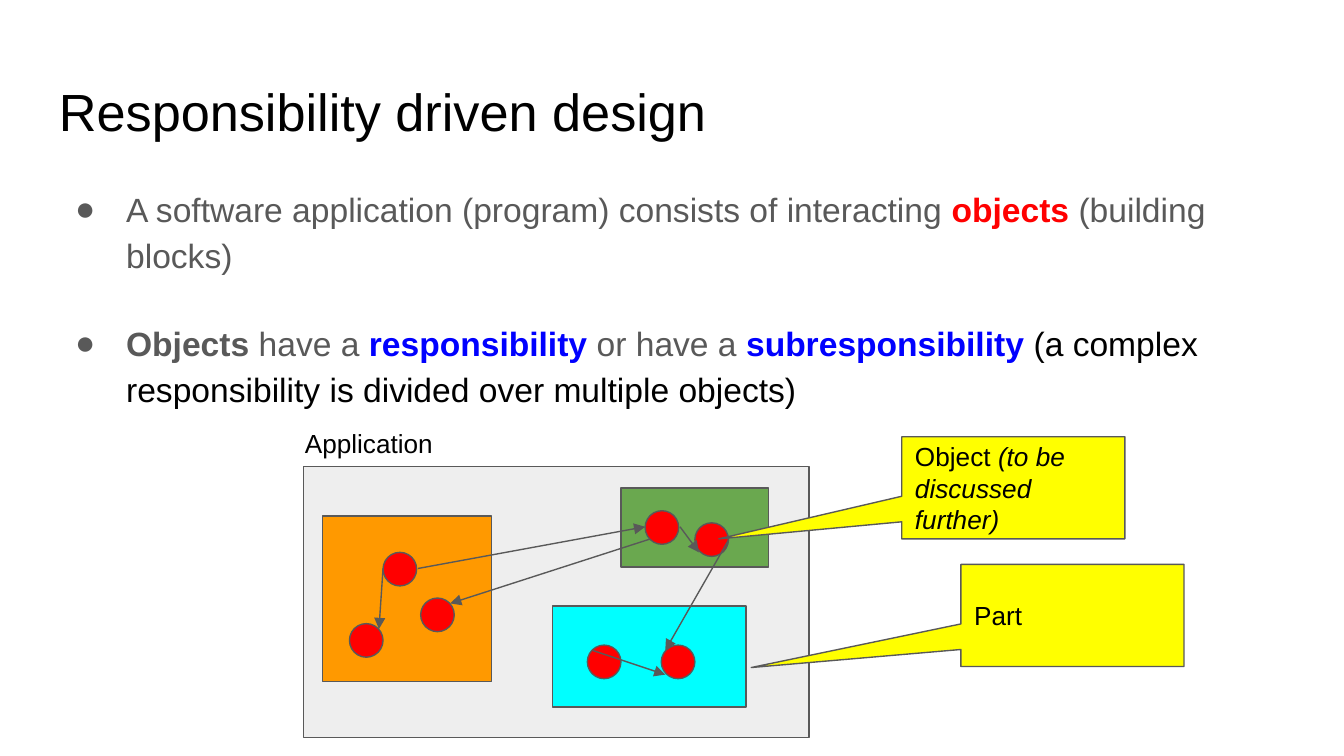
from dataclasses import dataclass

from lxml import etree
from pptx import Presentation
from pptx.dml.color import RGBColor
from pptx.enum.shapes import MSO_CONNECTOR, MSO_SHAPE
from pptx.enum.text import MSO_ANCHOR, PP_ALIGN
from pptx.oxml.ns import qn
from pptx.util import Inches, Pt

RECT = MSO_SHAPE.RECTANGLE
DOT = MSO_SHAPE.FLOWCHART_CONNECTOR
CALL = MSO_SHAPE.ROUNDED_RECTANGULAR_CALLOUT
LINE = MSO_CONNECTOR.STRAIGHT
TOP, MID = MSO_ANCHOR.TOP, MSO_ANCHOR.MIDDLE
LEFT = PP_ALIGN.LEFT

# The grid has 100 columns of square cells on a 16:9 slide
CELL = 0.1
COLS = 100
ROWS = COLS * 9 / 16
SIDE = 2.5  # dot size in cells
FONT = "Arial"
HUES = {
    "black": "000000", "gray": "595959", "pale": "EEEEEE", "red": "FF0000",
    "blue": "0000FF", "orange": "FF9900", "cyan": "00FFFF",
    "green": "6AA84F", "yellow": "FFFF00",
}


@dataclass
class Box:
    col: float
    row: float
    wide: float
    high: float
    hue: str = ""


@dataclass
class Run:
    text: str
    hue: str = "black"
    bold: bool = False
    slant: bool = False


@dataclass
class Arrow:
    start: tuple[float, float]
    end: tuple[float, float]


@dataclass
class Note:
    box: Box
    tip: tuple[float, float]  # pointer, as shares of the box from its centre
    runs: list[Run]


TITLE = Box(3.4, 4.9, 93.2, 6.3)
BODY = Box(3.4, 12.6, 93.2, 37.4)
LABEL = Box(21.7, 30.8, 46.7, 4.9)

POINTS = [
    [Run("A software application (program) consists of interacting ", "gray"),
     Run("objects", "red", True),
     Run(" (building blocks)", "gray")],
    [Run("Objects", "gray", True),
     Run(" have a ", "gray"),
     Run("responsibility", "blue", True),
     Run(" or have a ", "gray"),
     Run("subresponsibility ", "blue", True),
     Run("(a complex responsibility is divided over multiple objects)")],
]
PARTS = [
    Box(22.6, 34.7, 37.6, 20.2, "pale"),
    Box(24, 38.4, 12.6, 12.3, "orange"),
    Box(41.1, 45.1, 14.4, 7.5, "cyan"),
    Box(46.2, 36.3, 11, 5.9, "green"),
]
DOTS = [(43.7, 48), (48, 38), (26, 46.4), (28.5, 41.1),
        (49.2, 48), (31.3, 44.5), (51.7, 38.9)]
UNDER = [Arrow((31.1, 42.3), (48, 39.2)), Arrow((48.4, 40.1), (33.5, 44.9))]
OVER = [
    Arrow((50.6, 39.2), (52, 41.1)),
    Arrow((54.2, 40.2), (49.5, 48.4)),
    Arrow((44.1, 48.4), (49.5, 50.2)),
    Arrow((28.5, 42.3), (28.2, 46.8)),
]
NOTES = [
    Note(Box(67.1, 32.5, 16.6, 7.6), (-1.32, 0.5),
         [Run("Object "), Run("(to be discussed further)", slant=True)]),
    Note(Box(71.5, 42, 16.6, 7.6), (-1.44, 0.51), [Run("Part")]),
]


def cells(*nums: float) -> list[int]:
    return [Inches(num * CELL) for num in nums]


def place(box: Box) -> list[int]:
    return cells(box.col, box.row, box.wide, box.high)


def tint(hue: str) -> RGBColor:
    return RGBColor.from_string(HUES[hue])


def frame(shape, anchor=TOP):
    text = shape.text_frame
    text.word_wrap = True
    text.vertical_anchor = anchor
    text.margin_left = text.margin_right = Inches(0.1)
    text.margin_top = text.margin_bottom = Inches(0.1)
    return text


def write(para, runs: list[Run], size: int) -> None:
    para.alignment = LEFT
    for item in runs:
        run = para.add_run()
        run.text = item.text
        font = run.font
        font.name, font.size = FONT, Pt(size)
        font.bold, font.italic = item.bold, item.slant
        font.color.rgb = tint(item.hue)


def label(slide, box: Box, runs: list[Run], size: int) -> None:
    text = frame(slide.shapes.add_textbox(*place(box)))
    write(text.paragraphs[0], runs, size)


def bullet(para) -> None:
    props = para._p.get_or_add_pPr()
    props.set("marL", str(Inches(0.5)))
    props.set("indent", str(Inches(-0.38)))
    color = etree.SubElement(props, qn("a:buClr"))
    etree.SubElement(color, qn("a:srgbClr"), val=HUES["gray"])
    etree.SubElement(props, qn("a:buFont"), typeface=FONT)
    etree.SubElement(props, qn("a:buChar"), char="●")


def points(slide) -> None:
    text = frame(slide.shapes.add_textbox(*place(BODY)))
    for num, runs in enumerate(POINTS):
        para = text.add_paragraph() if num else text.paragraphs[0]
        bullet(para)
        para.line_spacing = 1.15
        para.space_before = Pt(22 if num else 0)
        write(para, runs, 18)


def draw(slide, kind, box: Box, hue: str):
    shape = slide.shapes.add_shape(kind, *place(box))
    shape.shadow.inherit = False
    shape.fill.solid()
    shape.fill.fore_color.rgb = tint(hue)
    shape.line.color.rgb = tint("gray")
    shape.line.width = Pt(0.75)
    return shape


def link(slide, arrow: Arrow) -> None:
    line = slide.shapes.add_connector(LINE, *cells(*arrow.start, *arrow.end))
    line.line.color.rgb = tint("gray")
    line.line.width = Pt(0.75)
    etree.SubElement(line.line._get_or_add_ln(), qn("a:tailEnd"),
                     type="triangle", w="med", len="med")
    etree.SubElement(line._element.spPr, qn("a:effectLst"))


def callout(slide, note: Note) -> None:
    shape = draw(slide, CALL, note.box, "yellow")
    for num, value in enumerate((*note.tip, 0)):
        shape.adjustments[num] = value
    write(frame(shape, MID).paragraphs[0], note.runs, 14)


def main() -> None:
    deck = Presentation()
    deck.slide_width, deck.slide_height = cells(COLS, ROWS)
    slide = deck.slides.add_slide(deck.slide_layouts[6])

    # Heading and bullets
    label(slide, TITLE, [Run("Responsibility driven design")], 28)
    points(slide)

    # Application, its parts and their objects
    for part in PARTS:
        draw(slide, RECT, part, part.hue)
    for arrow in UNDER:
        link(slide, arrow)
    label(slide, LABEL, [Run("Application")], 14)
    for col, row in DOTS:
        draw(slide, DOT, Box(col, row, SIDE, SIDE), "red")
    for arrow in OVER:
        link(slide, arrow)

    # Callouts
    for note in NOTES:
        callout(slide, note)
    deck.save("out.pptx")


if __name__ == "__main__":
    main()
